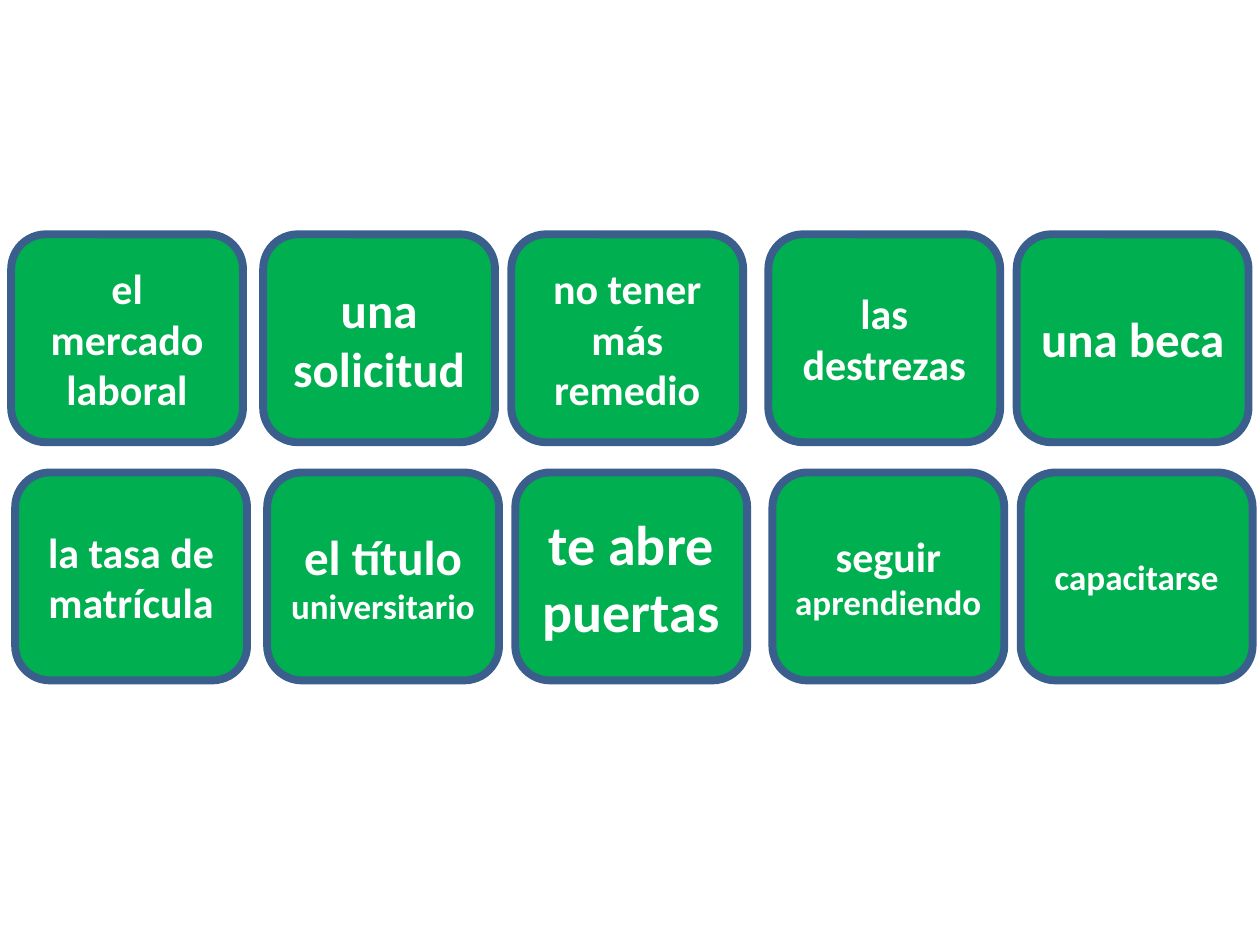
from pptx import Presentation
from pptx.dml.color import RGBColor
from pptx.enum.shapes import MSO_SHAPE as Shape
from pptx.enum.text import MSO_ANCHOR as Anchor, PP_ALIGN as Align
from pptx.util import Pt

COLORS = {"card": "00B050", "border": "3A5F8C", "text": "FFFFFF"}
FONT = "Calibri"
CARD_WIDTH, CARD_HEIGHT = 132.5, 118.8
# Card positions from the left edge of a row
COLUMN_OFFSETS = (0, 144, 285.8, 432.7, 574.6)

# Each card is a list of (text, size) runs
WORK_AND_STUDY = [
    [("el mercado laboral", 24)],
    [("una solicitud", 28)],
    [("no tener más remedio", 24)],
    [("las destrezas", 24)],
    [("una beca", 28)],
]
UNIVERSITY = [
    [("la tasa de matrícula", 24)],
    [("el título ", 28), ("universitario", 20)],
    [("te abre puertas", 32)],
    [("seguir ", 24), ("aprendiendo", 20)],
    [("capacitarse", 20)],
]


def color(role):
    return RGBColor.from_string(COLORS[role])


def add_card(slide, left, top, width, height, phrase):
    """Place one rounded vocabulary card."""
    card = slide.shapes.add_shape(
        Shape.ROUNDED_RECTANGLE, Pt(left), Pt(top), Pt(width), Pt(height))
    card.shadow.inherit = False
    card.fill.solid()
    card.fill.fore_color.rgb = color("card")
    card.line.color.rgb = color("border")
    card.line.width = Pt(4.5)

    frame = card.text_frame
    frame.word_wrap = True
    frame.vertical_anchor = Anchor.MIDDLE
    line = frame.paragraphs[0]
    line.alignment = Align.CENTER
    for text, size in phrase:
        run = line.add_run()
        run.text = text
        run.font.name = FONT
        run.font.size = Pt(size)
        run.font.bold = True
        run.font.color.rgb = color("text")


def add_card_row(slide, left, top, phrases):
    """Place a row of cards from its top left corner."""
    for offset, phrase in zip(COLUMN_OFFSETS, phrases):
        add_card(slide, left + offset, top, CARD_WIDTH, CARD_HEIGHT, phrase)


def main():
    deck = Presentation()
    deck.slide_width, deck.slide_height = Pt(720), Pt(540)
    slide = deck.slides.add_slide(deck.slide_layouts[6])

    # Two rows of vocabulary, the lower one set slightly to the right
    add_card_row(slide, 6.4, 133.9, WORK_AND_STUDY)
    add_card_row(slide, 8.7, 270, UNIVERSITY)

    deck.save("out.pptx")


if __name__ == "__main__":
    main()
